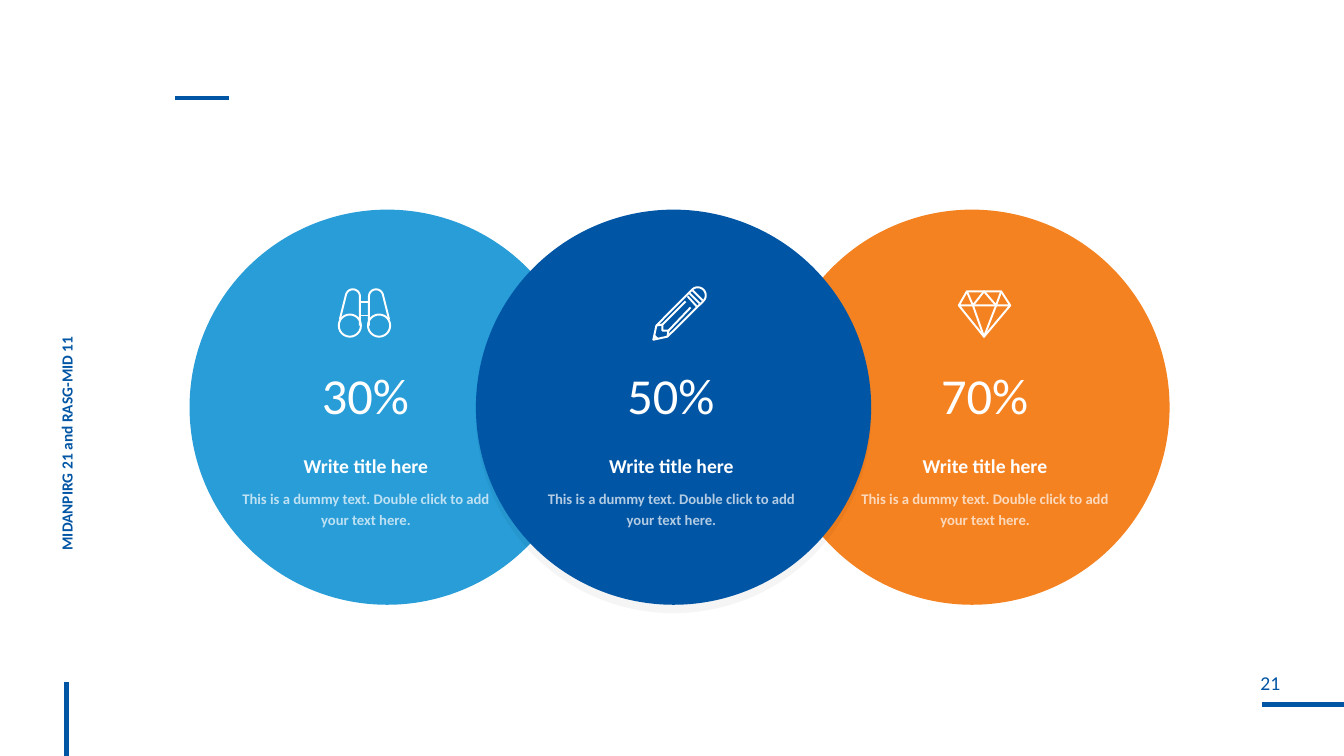
import math

import pptx
import pptx.dml.color
import pptx.enum.shapes
import pptx.enum.text
import pptx.oxml
import pptx.oxml.ns
import pptx.util
from pptx.util import Inches

NAVY = pptx.dml.color.RGBColor(0x00, 0x55, 0xA5)
SKY = pptx.dml.color.RGBColor(0x28, 0x9D, 0xD8)
ORANGE = pptx.dml.color.RGBColor(0xF5, 0x82, 0x20)
WHITE = pptx.dml.color.RGBColor(0xFF, 0xFF, 0xFF)
FONT = "Calibri"
CENTER = pptx.enum.text.PP_ALIGN.CENTER
LEFT = pptx.enum.text.PP_ALIGN.LEFT
GROW = pptx.enum.text.MSO_AUTO_SIZE.SHAPE_TO_FIT_TEXT
DRAWING_NS = pptx.oxml.ns.nsdecls("a")

DIAMETER = 3.92
CIRCLE_TOP = 2.08


def arc(center_x, center_y, radius, start, end, steps=24):
    """Points along a circular arc, with the angles in degrees."""
    angles = [math.radians(start + (end - start) * i / steps) for i in range(steps + 1)]
    return [(center_x + radius * math.cos(a), center_y + radius * math.sin(a))
            for a in angles]


def mirrored(points, width):
    return [(width - x, y) for x, y in points]


# Each icon is a list of strokes, in inches from the icon's top left corner.
BARREL = [(0.02, 0.31), *arc(0.15, 0.08, 0.07, 195, 360, 12), (0.22, 0.37)]
LENS = arc(0.12, 0.37, 0.11, 0, 360)
BINOCULARS = [
    BARREL, LENS, mirrored(BARREL, 0.53), mirrored(LENS, 0.53),
    [(0.22, 0.14), (0.31, 0.14)], [(0.22, 0.27), (0.31, 0.27)],
]
PENCIL = [
    [(0.01, 0.53), (0.04, 0.39), *arc(0.45, 0.09, 0.08, 225, 405, 12),
     (0.15, 0.5), (0.01, 0.53)],
    [(0.04, 0.39), (0.1, 0.38), (0.1, 0.44), (0.16, 0.44), (0.15, 0.5)],
    [(0.1, 0.38), (0.33, 0.15)], [(0.16, 0.44), (0.38, 0.21)],
    [(0.35, 0.1), (0.44, 0.2)], [(0.37, 0.07), (0.47, 0.17)],
    [(0.4, 0.04), (0.5, 0.14)], [(0.02, 0.49), (0.05, 0.52)],
]
DIAMOND = [
    [(0.01, 0.15), (0.09, 0.01), (0.43, 0.01), (0.52, 0.15), (0.26, 0.46),
     (0.01, 0.15), (0.52, 0.15)],
    [(0.09, 0.01), (0.15, 0.15), (0.26, 0.01), (0.38, 0.15), (0.43, 0.01)],
    [(0.15, 0.15), (0.26, 0.46), (0.38, 0.15)],
]


def add_run(paragraph, text, size, color, bold=False):
    run = paragraph.add_run()
    run.text = text
    run.font.name = FONT
    run.font.size = pptx.util.Pt(size)
    run.font.bold = bold
    run.font.color.rgb = color
    return run


def add_text_frame(slide, left, top, width, height, margins, wrap):
    """Add a text box; margins are its side and its top and bottom insets."""
    box = slide.shapes.add_textbox(Inches(left), Inches(top), Inches(width), Inches(height))
    frame = box.text_frame
    frame.margin_left = frame.margin_right = Inches(margins[0])
    frame.margin_top = frame.margin_bottom = Inches(margins[1])
    frame.word_wrap = wrap
    return box, frame


def add_rule(slide, x1, y1, x2, y2):
    rule = slide.shapes.add_connector(
        pptx.enum.shapes.MSO_CONNECTOR.STRAIGHT,
        Inches(x1), Inches(y1), Inches(x2), Inches(y2))
    rule.line.color.rgb = NAVY
    rule.line.width = pptx.util.Pt(3)
    rule._element.spPr.append(pptx.oxml.parse_xml(f"<a:effectLst {DRAWING_NS}/>"))


def add_page_frame(slide, width, height):
    """Draw the corner rules, page number and sideways meeting name."""
    add_rule(slide, width - 0.81, height - 0.51, width, height - 0.51)
    _, number = add_text_frame(slide, width - 1.33, height - 0.84, 1.2, 0.33, (0, 0), False)
    number.vertical_anchor = pptx.enum.text.MSO_ANCHOR.TOP
    number.paragraphs[0].alignment = CENTER
    add_run(number.paragraphs[0], "21", 14, NAVY)

    add_rule(slide, 0.66, height - 0.73, 0.66, height)
    label, meeting = add_text_frame(slide, -1.9, 2.83, 5.14, 0.32, (0.1, 0.05), True)
    label.rotation = 270
    meeting.vertical_anchor = pptx.enum.text.MSO_ANCHOR.MIDDLE
    meeting.paragraphs[0].alignment = LEFT
    meeting.paragraphs[0].line_spacing = 0.9
    add_run(meeting.paragraphs[0], "MIDANPIRG 21 and RASG-MID 11", 11, NAVY, True)

    add_rule(slide, 1.74, 0.97, 2.27, 0.97)


def add_circle(slide, left, color):
    circle = slide.shapes.add_shape(
        pptx.enum.shapes.MSO_SHAPE.OVAL,
        Inches(left), Inches(CIRCLE_TOP), Inches(DIAMETER), Inches(DIAMETER))
    circle.shadow.inherit = False
    circle.fill.solid()
    circle.fill.fore_color.rgb = color
    circle.line.fill.background()
    return circle


def add_drop_shadow(shape):
    effects = shape._element.spPr.find(pptx.oxml.ns.qn("a:effectLst"))
    effects.append(pptx.oxml.parse_xml(
        f'<a:outerShdw {DRAWING_NS} blurRad="0" dist="{pptx.util.Pt(6)}" dir="5400000" '
        'algn="t" rotWithShape="0"><a:srgbClr val="000000"><a:alpha val="4000"/>'
        '</a:srgbClr></a:outerShdw>'))


def add_icon(slide, strokes, left, top):
    placed = [[(Inches(left + x), Inches(top + y)) for x, y in stroke] for stroke in strokes]
    builder = slide.shapes.build_freeform(*placed[0][0])
    for index, stroke in enumerate(placed):
        if index:
            builder.move_to(*stroke[0])
        builder.add_line_segments(stroke[1:], close=False)
    icon = builder.convert_to_shape()
    icon.shadow.inherit = False
    icon.fill.background()
    icon.line.color.rgb = WHITE
    icon.line.width = pptx.util.Pt(1.4)


def add_caption(slide, center, percent):
    """Write the percentage, title and body text around a centre line."""
    _, figure = add_text_frame(slide, center - 0.5, 3.56, 0.99, 0.71, (0, 0.05), False)
    figure.auto_size = GROW
    figure.paragraphs[0].alignment = CENTER
    add_run(figure.paragraphs[0], percent, 36, WHITE)

    _, caption = add_text_frame(slide, center - 1.25, 4.41, 2.5, 0.89, (0, 0.05), True)
    caption.auto_size = GROW
    title = caption.paragraphs[0]
    body = caption.add_paragraph()
    for paragraph in (title, body):
        paragraph.alignment = CENTER
        paragraph.line_spacing = 1.2
    body.space_before = pptx.util.Pt(6)
    add_run(title, "Write title here", 14, WHITE, True)
    text = add_run(body, "This is a dummy text. Double click to add your text here.",
                   10.5, WHITE, True)
    color = text._r.rPr.find(".//" + pptx.oxml.ns.qn("a:srgbClr"))
    color.append(pptx.oxml.parse_xml(f'<a:alpha {DRAWING_NS} val="70000"/>'))


def main():
    presentation = pptx.Presentation()
    presentation.slide_width = Inches(13.33)
    presentation.slide_height = Inches(7.5)
    slide = presentation.slides.add_slide(presentation.slide_layouts[6])

    add_page_frame(slide, 13.33, 7.5)
    add_circle(slide, 1.88, SKY)
    add_circle(slide, 7.68, ORANGE)
    add_drop_shadow(add_circle(slide, 4.72, NAVY))

    for center, percent, strokes, icon_left, icon_top in (
        (3.63, "30%", BINOCULARS, 3.35, 2.86),
        (6.66, "50%", PENCIL, 6.47, 2.84),
        (9.77, "70%", DIAMOND, 9.5, 2.88),
    ):
        add_icon(slide, strokes, icon_left, icon_top)
        add_caption(slide, center, percent)

    presentation.save("out.pptx")


if __name__ == "__main__":
    main()
